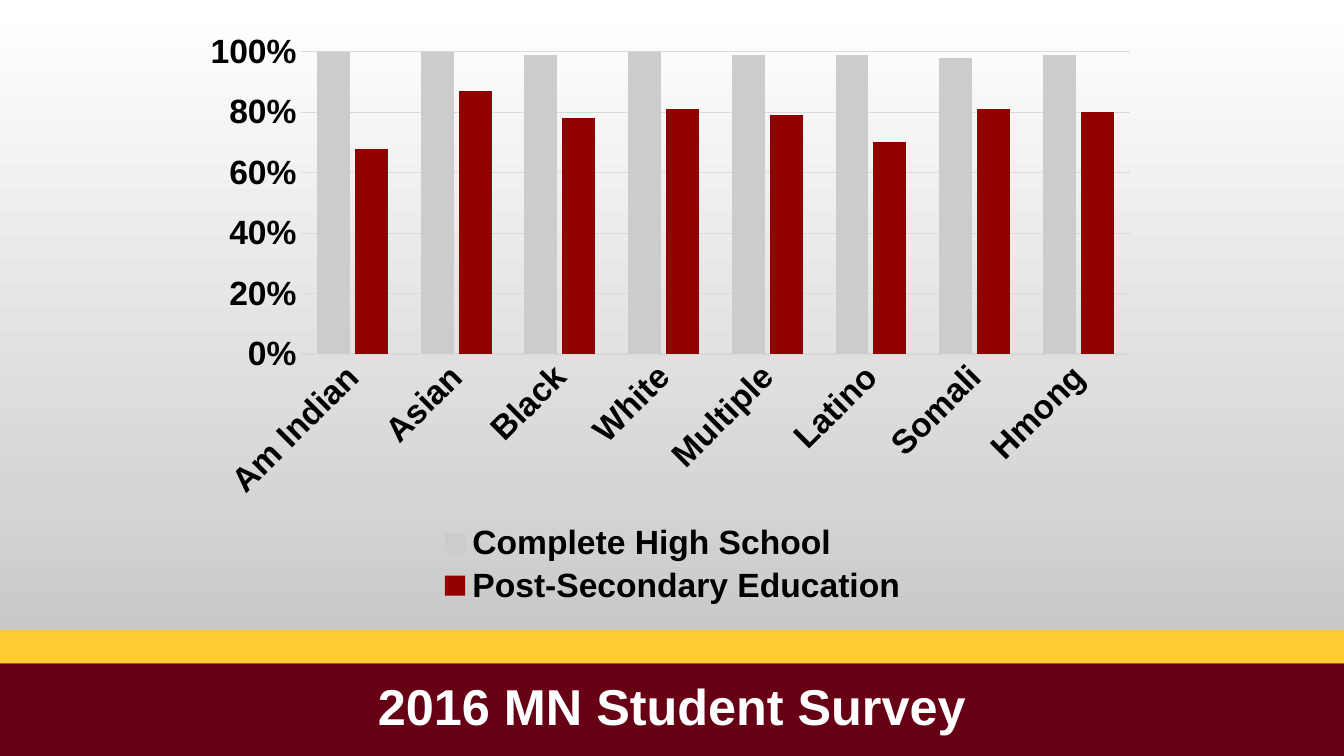
from lxml import etree
from pptx import Presentation
from pptx.chart.data import CategoryChartData
from pptx.dml.color import RGBColor
from pptx.enum.chart import XL_CHART_TYPE, XL_LEGEND_POSITION, XL_TICK_MARK
from pptx.enum.shapes import MSO_SHAPE
from pptx.enum.text import MSO_ANCHOR, PP_ALIGN
from pptx.oxml.ns import qn
from pptx.util import Inches, Pt

FONT = "Arial"
GROUPS = ["Am Indian", "Asian", "Black", "White", "Multiple", "Latino", "Somali", "Hmong"]
SERIES = [
    ("Complete High School", "CCCCCC", [1, 1, 0.99, 1, 0.99, 0.99, 0.98, 0.99]),
    ("Post-Secondary Education", "920000", [0.68, 0.87, 0.78, 0.81, 0.79, 0.7, 0.81, 0.8]),
]


def color(value):
    return RGBColor.from_string(value)


def style_font(font, size, value):
    font.name = FONT
    font.size = Pt(size)
    font.bold = True
    font.color.rgb = color(value)


def style_line(line, value):
    line.color.rgb = color(value)
    line.width = Pt(0.75)


def set_layout(parent, position, box, inner=False):
    """Place a chart part by fractions of the chart's size."""
    for old in parent.findall(qn("c:layout")):
        parent.remove(old)
    layout = etree.Element(qn("c:layout"))
    parent.insert(position, layout)
    manual = etree.SubElement(layout, qn("c:manualLayout"))
    settings = [("layoutTarget", "inner")] if inner else []
    settings += [("xMode", "edge"), ("yMode", "edge")]
    settings += zip("xywh", box)
    for name, value in settings:
        etree.SubElement(manual, qn(f"c:{name}")).set("val", str(value))


def add_background(slide):
    fill = slide.background.fill
    fill.gradient()
    fill.gradient_angle = 270
    for stop, value in zip(fill.gradient_stops, ("FFFFFF", "BFBFBF")):
        stop.color.rgb = color(value)


def add_band(slide, left, top, width, height, value):
    band = slide.shapes.add_shape(
        MSO_SHAPE.RECTANGLE, Inches(left), Inches(top), Inches(width), Inches(height))
    band.shadow.inherit = False
    band.fill.solid()
    band.fill.fore_color.rgb = color(value)
    band.line.fill.background()


def add_survey_chart(slide, left, top, width, height):
    data = CategoryChartData(number_format="0%")
    data.categories = GROUPS
    for name, _, values in SERIES:
        data.add_series(name, values)
    chart = slide.shapes.add_chart(
        XL_CHART_TYPE.COLUMN_CLUSTERED, Inches(left), Inches(top),
        Inches(width), Inches(height), data).chart
    chart.has_title = False
    style_font(chart.font, 24, "000000")

    # Columns
    plot = chart.plots[0]
    plot.gap_width = 100
    plot.overlap = -15
    plot.vary_by_categories = False
    for series, (_, value, _) in zip(plot.series, SERIES):
        series.format.fill.solid()
        series.format.fill.fore_color.rgb = color(value)
        series.invert_if_negative = False

    # Axes
    for axis in (chart.category_axis, chart.value_axis):
        axis.major_tick_mark = XL_TICK_MARK.NONE
        axis.minor_tick_mark = XL_TICK_MARK.NONE
        style_font(axis.tick_labels.font, 24, "000000")
    category_axis, value_axis = chart.category_axis, chart.value_axis
    style_line(category_axis.format.line, "D9D9D9")
    label_body = category_axis._element.find(qn("c:txPr")).find(qn("a:bodyPr"))
    label_body.set("rot", "-2700000")
    label_body.set("vert", "horz")
    value_axis.minimum_scale = 0
    value_axis.maximum_scale = 1
    value_axis.major_unit = 0.2
    value_axis.tick_labels.number_format = "0%"
    value_axis.tick_labels.number_format_is_linked = False
    value_axis.format.line.fill.background()
    style_line(value_axis.major_gridlines.format.line, "D9D9D9")

    # Legend and plot positions
    chart.has_legend = True
    legend = chart.legend
    legend.position = XL_LEGEND_POSITION.BOTTOM
    legend.include_in_layout = False
    style_font(legend.font, 24, "000000")
    set_layout(legend._element, 1, (0.25, 0.84, 0.5, 0.15))
    plot_area = chart._chartSpace.chart.plotArea
    set_layout(plot_area, 0, (0.11, 0.05, 0.87, 0.51), inner=True)


def add_title(slide, left, top, width, height, text):
    title = slide.shapes.title
    title.left, title.top = Inches(left), Inches(top)
    title.width, title.height = Inches(width), Inches(height)
    # Bring the title in front of the band
    slide.shapes._spTree.append(title._element)
    frame = title.text_frame
    frame.word_wrap = True
    frame.vertical_anchor = MSO_ANCHOR.MIDDLE
    paragraph = frame.paragraphs[0]
    paragraph.alignment = PP_ALIGN.CENTER
    paragraph.line_spacing = 0.9
    run = paragraph.add_run()
    run.text = text
    style_font(run.font, 36, "FFFFFF")


def main():
    presentation = Presentation()
    presentation.slide_width = Inches(13.33)
    presentation.slide_height = Inches(7.5)
    slide = presentation.slides.add_slide(presentation.slide_layouts[5])
    add_background(slide)
    add_band(slide, 0, 6.58, 13.33, 0.92, "670015")
    add_band(slide, 0, 6.25, 13.33, 0.33, "FFCC33")
    add_survey_chart(slide, 1.94, 0.22, 9.46, 5.88)
    add_title(slide, 0, 6.58, 13.33, 0.92, "2016 MN Student Survey")
    presentation.save("out.pptx")


if __name__ == "__main__":
    main()
